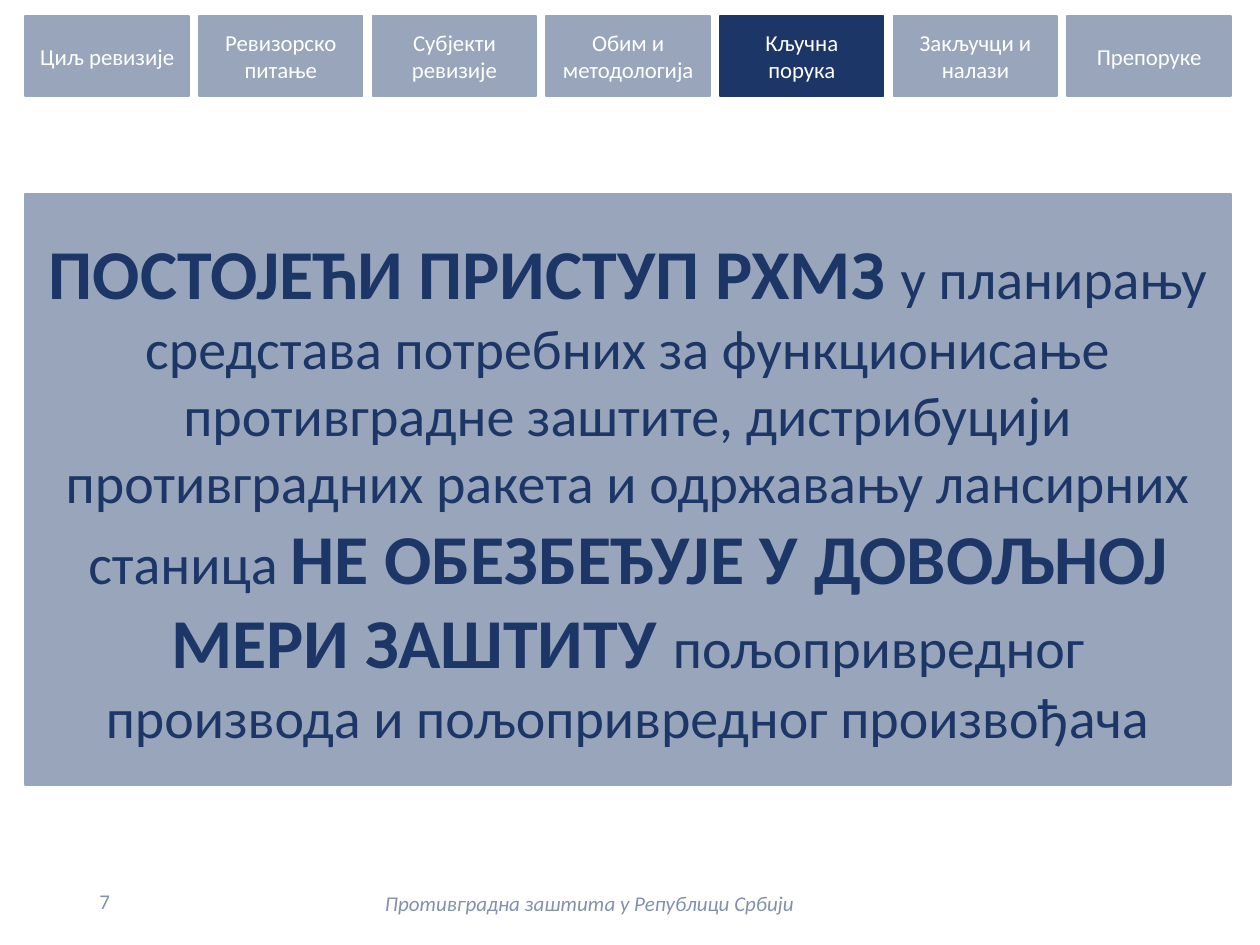
from pptx import Presentation
from pptx.dml.color import RGBColor
from pptx.enum.shapes import MSO_SHAPE
from pptx.enum.text import MSO_ANCHOR, PP_ALIGN
from pptx.util import Inches, Pt

COLORS = {"navy": "1C3668", "haze": "99A5BB", "footer": "8391AC", "white": "FFFFFF"}
LEFT, WIDTH = 0.2, 9.57
TAB_WIDTH = 1.3
TABS = [
    "Циљ ревизије", "Ревизорско питање", "Субјекти ревизије", "Обим и методологија",
    "Кључна порука", "Закључци и налази", "Препоруке",
]
ACTIVE_TAB = "Кључна порука"
STRONG = {"size": Pt(40), "bold": True}
NORMAL = {"size": Pt(32), "bold": False}
MESSAGE = [
    ("ПОСТОЈЕЋИ ПРИСТУП РХМЗ ", STRONG),
    ("у планирању средстава потребних за функционисање противградне заштите, "
     "дистрибуцији противградних ракета и одржавању лансирних станица ", NORMAL),
    ("НЕ ОБЕЗБЕЂУЈЕ У ДОВОЉНОЈ МЕРИ ЗАШТИТУ ", STRONG),
    ("пољопривредног производа и пољопривредног произвођача", NORMAL),
]


class SlideBuilder:
    font_name = "Calibri"

    def __init__(self, slide):
        self.slide = slide

    def color(self, name):
        return RGBColor.from_string(COLORS[name])

    def fill_text(self, shape, runs, color, alignment):
        frame = shape.text_frame
        frame.word_wrap = True
        frame.vertical_anchor = MSO_ANCHOR.MIDDLE
        paragraph = frame.paragraphs[0]
        paragraph.alignment = alignment
        for text, formats in runs:
            run = paragraph.add_run()
            run.text = text
            run.font.color.rgb = self.color(color)
            for attribute, value in {"name": self.font_name, **formats}.items():
                setattr(run.font, attribute, value)

    def text(self, box, runs, color, alignment=PP_ALIGN.LEFT):
        shape = self.slide.shapes.add_textbox(*map(Inches, box))
        self.fill_text(shape, runs, color, alignment)

    def panel(self, box, runs, fill, color):
        shape = self.slide.shapes.add_shape(MSO_SHAPE.RECTANGLE, *map(Inches, box))
        shape.shadow.inherit = False
        shape.fill.solid()
        shape.fill.fore_color.rgb = self.color(fill)
        shape.line.color.rgb = self.color(fill)
        shape.line.width = Pt(1)
        self.fill_text(shape, runs, color, PP_ALIGN.CENTER)


def main():
    presentation = Presentation()
    presentation.slide_width = Inches(10)
    presentation.slide_height = Inches(7.5)
    builder = SlideBuilder(presentation.slides.add_slide(presentation.slide_layouts[6]))

    footer = {"size": Pt(12)}
    builder.text((2.67, 6.97, 4.02, 0.39),
                 [("Противградна заштита у Републици Србији", {**footer, "italic": True})],
                 "footer", PP_ALIGN.CENTER)
    builder.text((0.69, 6.95, 2.25, 0.4), [("7", footer)], "footer")

    step = (WIDTH - TAB_WIDTH) / (len(TABS) - 1)
    for index, label in enumerate(TABS):
        fill = "navy" if label == ACTIVE_TAB else "haze"
        builder.panel((LEFT + index * step, 0.13, TAB_WIDTH, 0.63),
                      [(label, {"size": Pt(13)})], fill, "white")

    builder.panel((LEFT, 1.54, WIDTH, 4.69), MESSAGE, "haze", "navy")
    presentation.save("out.pptx")


if __name__ == "__main__":
    main()
